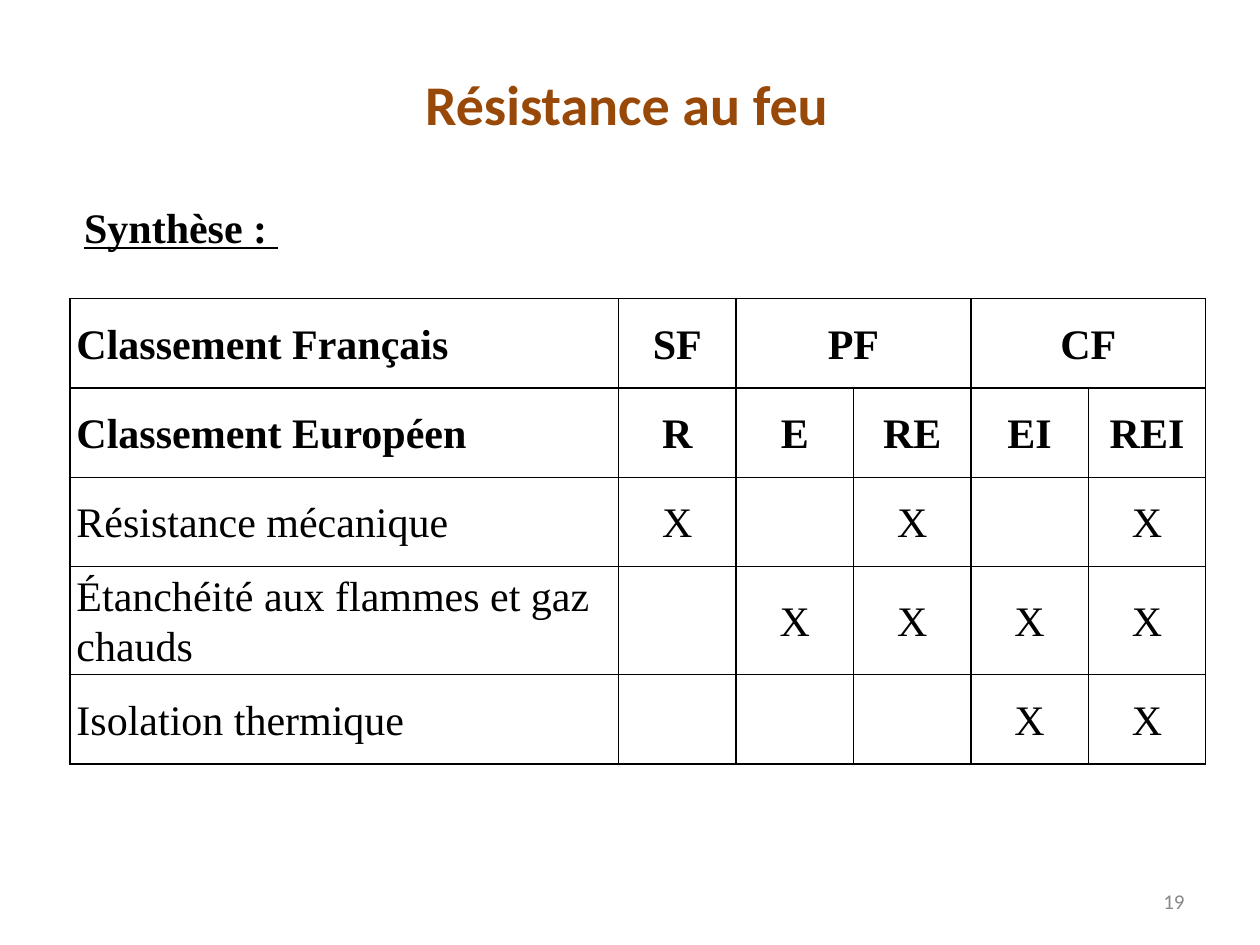
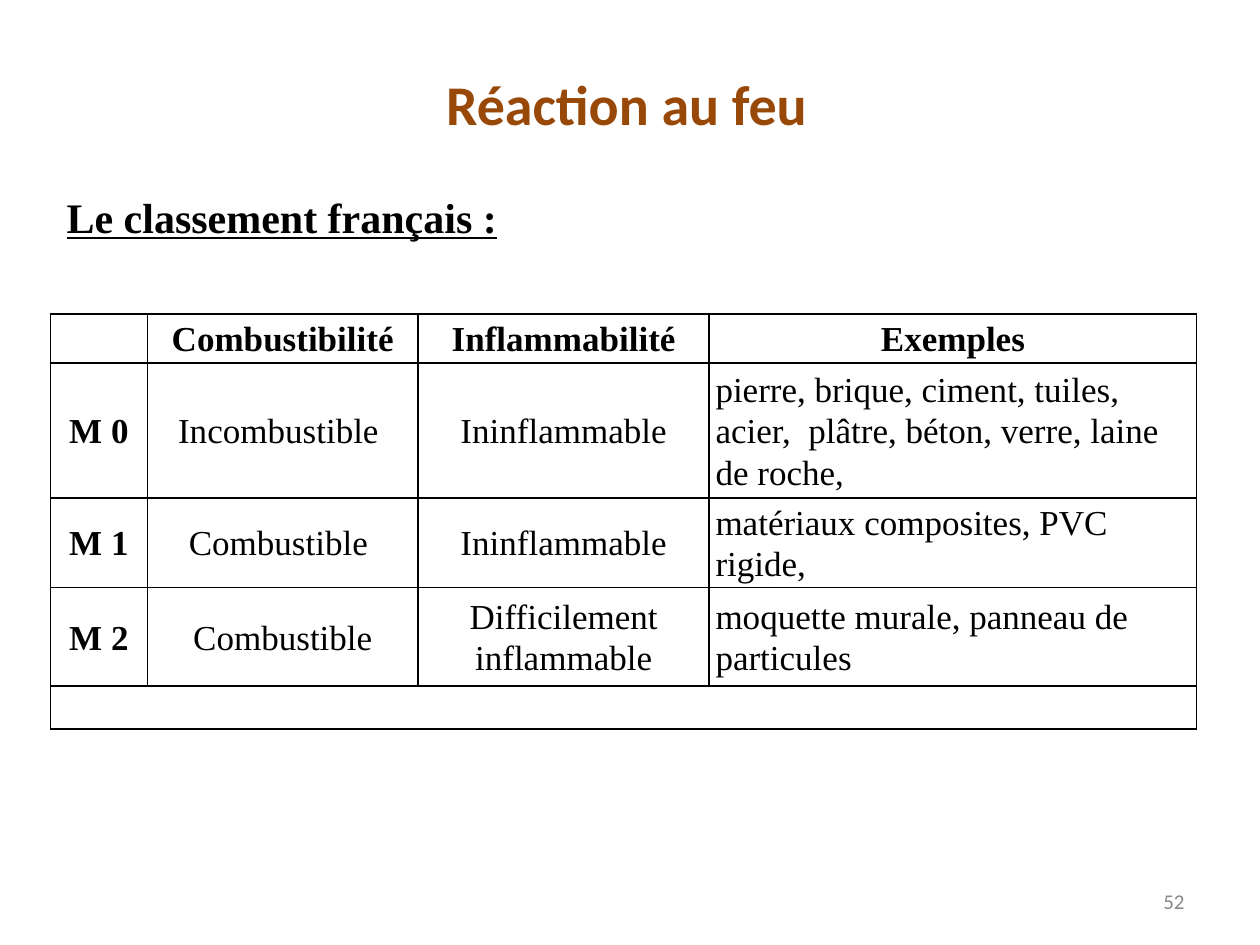
"""Build two fire-safety slides: resistance and reaction classifications."""
from lxml import etree
from pptx import Presentation
from pptx.dml.color import RGBColor
from pptx.enum import text
from pptx.oxml.ns import qn
from pptx.util import Pt

BLACK, BROWN, GREY = "000000", "984807", "898989"
SANS, SERIF = "Calibri", "Times New Roman"
LEFT, CENTER = text.PP_ALIGN.LEFT, text.PP_ALIGN.CENTER
RIGHT, JUSTIFY = text.PP_ALIGN.RIGHT, text.PP_ALIGN.JUSTIFY
TOP, MIDDLE = text.MSO_ANCHOR.TOP, text.MSO_ANCHOR.MIDDLE

TITLE_BOX = (19.4, 21.6, 677.5, 74.2)
NUMBER_BOX = (516.2, 500.4, 167.8, 28.8)

# None continues the cell to its left.
SLIDES = [
    {
        "title": "Résistance au feu",
        "number": "19",
        "heading": ("Synthèse : ", (41, 111.6, 635, 36.7), JUSTIFY),
        "origin": (40.1, 170.6),
        "columns": [313.4] + [67.1] * 5,
        "heights": [51.1, 51.1, 51.1, 59.5, 51.1],
        "size": 24,
        "bold_rows": {0, 1},
        "bold_columns": set(),
        "left_column": 0,
        "rows": [
            ["Classement Français", "SF", "PF", None, "CF", None],
            ["Classement Européen", "R", "E", "RE", "EI", "REI"],
            ["Résistance mécanique", "X", "", "X", "", "X"],
            ["Étanchéité aux flammes et gaz chauds", "", "X", "X", "X", "X"],
            ["Isolation thermique", "", "", "", "X", "X"],
        ],
    },
    {
        "title": "Réaction au feu",
        "number": "52",
        "heading": ("Le classement français :", (31, 105.8, 300.2, 36.7), LEFT),
        "origin": (28.8, 179.3),
        "columns": [55.4, 154.8, 166.3, 278.6],
        "heights": [28.1, 76.9, 51, 56.2, 24.5],
        "size": 20,
        "bold_rows": {0},
        "bold_columns": {0},
        "left_column": 3,
        "rows": [
            ["", "Combustibilité", "Inflammabilité", "Exemples"],
            ["M 0", "Incombustible ", "Ininflammable",
             "pierre, brique, ciment, tuiles, acier,  plâtre, béton, verre, laine de roche,"],
            ["M 1", "Combustible ", "Ininflammable", "matériaux composites, PVC rigide,"],
            ["M 2", "Combustible", "Difficilement inflammable",
             "moquette murale, panneau de particules"],
            ["", None, None, None],
        ],
    },
]


def color(hex_code):
    return RGBColor.from_string(hex_code)


def write(frame, words, size, face, ink, align, bold=False, underline=False):
    line = frame.paragraphs[0]
    if words:
        line.text = words
    line.alignment = align
    font = line.font
    font.size, font.name, font.bold = Pt(size), face, bold
    font.color.rgb = color(ink)
    if underline:
        font.underline = True
    return line


def add_text(slide, box, anchor, *style, **emphasis):
    frame = slide.shapes.add_textbox(*map(Pt, box)).text_frame
    frame.word_wrap = True
    frame.vertical_anchor = anchor
    write(frame, *style, **emphasis)


def add_borders(cell):
    properties = cell._tc.get_or_add_tcPr()
    for side in ("a:lnL", "a:lnR", "a:lnT", "a:lnB"):
        edge = etree.SubElement(properties, qn(side), w=str(Pt(1)))
        fill = etree.SubElement(edge, qn("a:solidFill"))
        etree.SubElement(fill, qn("a:srgbClr"), val=BLACK)


def add_grid(slide, content):
    rows, widths, heights = content["rows"], content["columns"], content["heights"]
    bounds = (*content["origin"], sum(widths), sum(heights))
    grid = slide.shapes.add_table(len(rows), len(widths), *map(Pt, bounds)).table
    grid.first_row = grid.horz_banding = False
    for column, width in zip(grid.columns, widths):
        column.width = Pt(width)
    for row, height in zip(grid.rows, heights):
        row.height = Pt(height)

    for r, row in enumerate(rows):
        for c, words in enumerate(row):
            cell = grid.cell(r, c)
            add_borders(cell)
            cell.fill.background()
            cell.vertical_anchor = MIDDLE
            cell.margin_left = cell.margin_right = Pt(3.6)
            cell.margin_top = cell.margin_bottom = Pt(0)
            if words:
                align = LEFT if c == content["left_column"] and r not in (
                    content["bold_rows"] if c else ()) else CENTER
                bold = r in content["bold_rows"] or c in content["bold_columns"]
                line = write(cell.text_frame, words, content["size"], SERIF, BLACK, align, bold)
                line.line_spacing = 1.07
        for c, words in enumerate(row):
            end = c + 1
            while end < len(row) and row[end] is None:
                end += 1
            if words is not None and end > c + 1:
                grid.cell(r, c).merge(grid.cell(r, end - 1))


def main():
    deck = Presentation()
    deck.slide_width, deck.slide_height = Pt(720), Pt(540)
    for content in SLIDES:
        slide = deck.slides.add_slide(deck.slide_layouts[6])
        add_text(slide, NUMBER_BOX, MIDDLE, content["number"], 12, SANS, GREY, RIGHT)
        add_text(slide, TITLE_BOX, MIDDLE, content["title"], 32, SANS, BROWN, CENTER, bold=True)
        heading, box, align = content["heading"]
        add_text(slide, box, TOP, heading, 24, SERIF, BLACK, align, bold=True, underline=True)
        add_grid(slide, content)
    deck.save("out.pptx")


if __name__ == "__main__":
    main()
